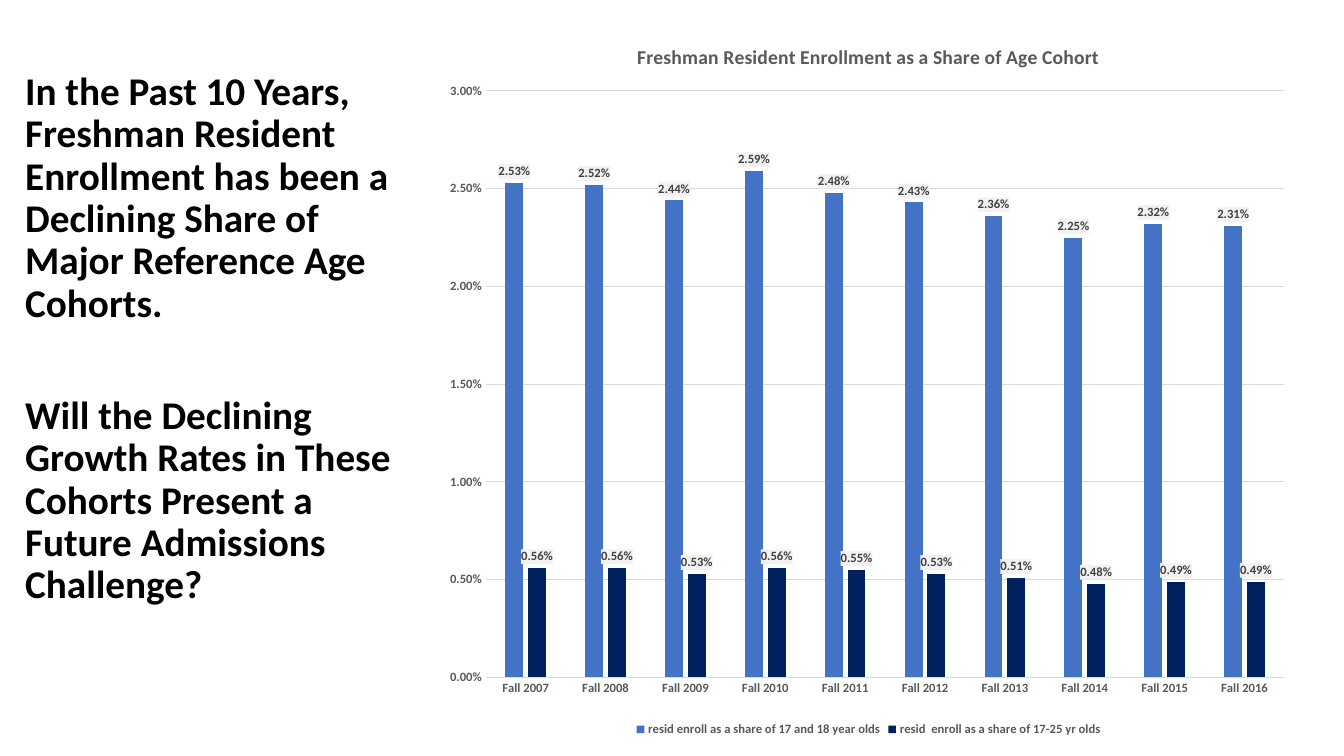
from lxml.etree import SubElement
from pptx import Presentation
from pptx.chart.data import CategoryChartData
from pptx.dml.color import RGBColor
from pptx.enum.chart import XL_CHART_TYPE as ChartType
from pptx.enum.chart import XL_LABEL_POSITION as LabelPosition
from pptx.enum.chart import XL_LEGEND_POSITION as LegendPosition
from pptx.enum.chart import XL_TICK_MARK as TickMark
from pptx.enum.text import MSO_ANCHOR, MSO_AUTO_SIZE
from pptx.oxml import parse_xml
from pptx.oxml.ns import nsdecls, qn
from pptx.util import Inches, Pt

FONT = "Calibri"
BLACK, GRAY, DARK_GRAY = "000000", "595959", "404040"
GRID, LABEL_FILL = "D9D9D9", "F2F2F2"
BLUE, NAVY = "4472C4", "002060"
PERCENT = "0.00%"

STATEMENTS = [
    "In the Past 10 Years, Freshman Resident Enrollment has been a "
    "Declining Share of Major Reference Age Cohorts.",
    "Will the Declining Growth Rates in These Cohorts Present a "
    "Future Admissions Challenge?",
]
TERMS = [f"Fall {year}" for year in range(2007, 2017)]
SHARES = [
    ("resid enroll as a share of 17 and 18 year olds", BLUE,
     [2.53, 2.52, 2.44, 2.59, 2.48, 2.43, 2.36, 2.25, 2.32, 2.31]),
    ("resid  enroll as a share of 17-25 yr olds", NAVY,
     [0.56, 0.56, 0.53, 0.56, 0.55, 0.53, 0.51, 0.48, 0.49, 0.49]),
]


def color(value):
    return RGBColor.from_string(value)


class EnrollmentSlide:
    """Holds the text style and the current slide, and adds its elements."""

    def __init__(self, presentation):
        self.slide = presentation.slides.add_slide(presentation.slide_layouts[1])
        title = self.slide.shapes.title
        title.element.getparent().remove(title.element)

    def style(self, font, size, value, bold=True):
        font.name = FONT
        font.size = Pt(size)
        font.bold = bold
        font.color.rgb = color(value)

    def body(self, left, top, width, height, statements):
        shape = self.slide.placeholders[1]
        shape.left, shape.top = Inches(left), Inches(top)
        shape.width, shape.height = Inches(width), Inches(height)
        frame = shape.text_frame
        frame.word_wrap = True
        frame.auto_size = MSO_AUTO_SIZE.NONE
        frame.vertical_anchor = MSO_ANCHOR.TOP
        for index, statement in enumerate(statements):
            paragraph = frame.add_paragraph() if index else frame.paragraphs[0]
            properties = paragraph._p.get_or_add_pPr()
            properties.set("marL", "0")
            properties.set("indent", "0")
            SubElement(properties, qn("a:buNone"))
            paragraph.line_spacing = 0.9
            paragraph.space_before = Pt(50 if index else 0)
            run = paragraph.add_run()
            run.text = statement
            self.style(run.font, 28, BLACK)

    def place(self, element, position, **box):
        for layout in element.findall(qn("c:layout")):
            element.remove(layout)
        target = '<c:layoutTarget val="inner"/>' if "w" in box else ""
        modes = "".join(f'<c:{key}Mode val="edge"/>' for key in ("x", "y"))
        sizes = "".join(f'<c:{key} val="{value}"/>' for key, value in box.items())
        element.insert(position, parse_xml(
            f'<c:layout {nsdecls("c")}><c:manualLayout>{target}{modes}{sizes}'
            "</c:manualLayout></c:layout>"))

    def chart_title(self, chart, text):
        chart.has_title = True
        run = chart.chart_title.text_frame.paragraphs[0].add_run()
        run.text = text
        self.style(run.font, 14, GRAY)
        self.place(chart.chart_title._element, 1, x=0.23, y=0.037)

    def axes(self, chart):
        category, value = chart.category_axis, chart.value_axis
        for axis in (category, value):
            axis.major_tick_mark = axis.minor_tick_mark = TickMark.NONE
            self.style(axis.tick_labels.font, 9, GRAY)
        value.minimum_scale, value.maximum_scale = 0, 0.03
        value.major_unit = 0.005
        value.tick_labels.number_format = PERCENT
        value.tick_labels.number_format_is_linked = False
        value.format.line.fill.background()
        for line in (category.format.line, value.major_gridlines.format.line):
            line.color.rgb = color(GRID)
            line.width = Pt(0.75)

    def series(self, series, fill):
        series.format.fill.solid()
        series.format.fill.fore_color.rgb = color(fill)
        series.invert_if_negative = False
        labels = series.data_labels
        labels.show_value = True
        labels.position = LabelPosition.OUTSIDE_END
        labels.number_format = PERCENT
        labels.number_format_is_linked = False
        self.style(labels.font, 9, DARK_GRAY)
        labels._element.find(qn("c:numFmt")).addnext(parse_xml(
            f'<c:spPr {nsdecls("c", "a")}><a:solidFill>'
            f'<a:srgbClr val="{LABEL_FILL}"/></a:solidFill></c:spPr>'))

    def column_chart(self, left, top, width, height, title, terms, shares):
        data = CategoryChartData(number_format=PERCENT)
        data.categories = terms
        for name, _, percents in shares:
            data.add_series(name, [round(percent / 100, 4) for percent in percents])
        chart = self.slide.shapes.add_chart(
            ChartType.COLUMN_CLUSTERED, Inches(left), Inches(top),
            Inches(width), Inches(height), data).chart
        self.style(chart.font, 10, BLACK, bold=False)
        self.chart_title(chart, title)
        self.axes(chart)
        plot = chart.plots[0]
        plot.gap_width, plot.overlap = 219, -27
        plot.vary_by_categories = False
        for series, (_, fill, _) in zip(plot.series, shares):
            self.series(series, fill)
        chart.has_legend = True
        chart.legend.position = LegendPosition.BOTTOM
        chart.legend.include_in_layout = False
        self.style(chart.legend.font, 9, GRAY)
        plot_area = chart._chartSpace.chart.plotArea
        self.place(plot_area, 0, x=0.06, y=0.107, w=0.918, h=0.806)


def main():
    presentation = Presentation()
    presentation.slide_width = Inches(13.33)
    presentation.slide_height = Inches(7.5)
    page = EnrollmentSlide(presentation)
    page.body(0.15, 0.66, 3.98, 6.6, STATEMENTS)
    page.column_chart(4.3, 0.13, 8.63, 7.22,
                      "Freshman Resident Enrollment as a Share of Age Cohort",
                      TERMS, SHARES)
    presentation.save("out.pptx")


if __name__ == "__main__":
    main()
